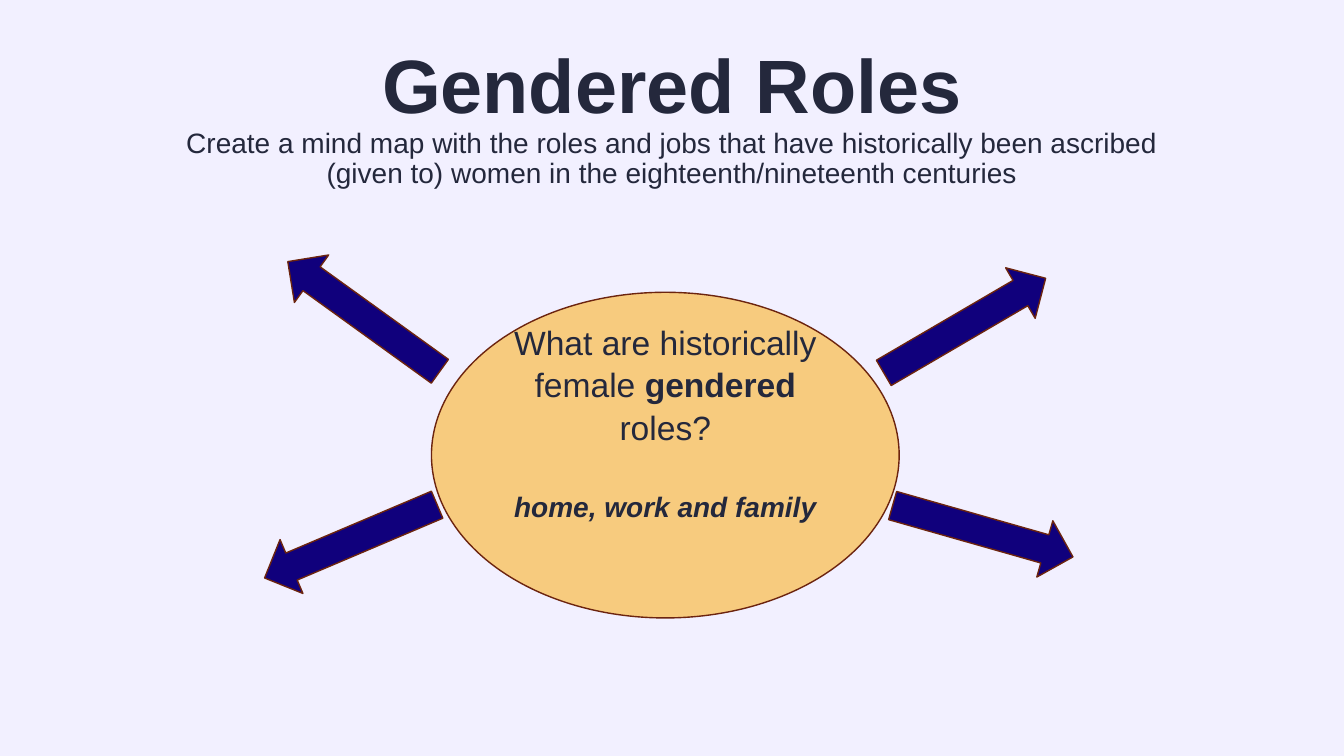
from pptx import Presentation
from pptx.dml.color import RGBColor
from pptx.enum.shapes import MSO_SHAPE
from pptx.enum.text import MSO_ANCHOR, MSO_AUTO_SIZE, PP_ALIGN
from pptx.util import Pt

ELLIPSE, UP_ARROW = MSO_SHAPE.OVAL, MSO_SHAPE.UP_ARROW
MIDDLE, CENTER, NO_FIT = MSO_ANCHOR.MIDDLE, PP_ALIGN.CENTER, MSO_AUTO_SIZE.NONE

LAVENDER = RGBColor(0xF2, 0xF0, 0xFF)
INK = RGBColor(0x24, 0x28, 0x3C)
AMBER = RGBColor(0xF7, 0xCB, 0x7E)
NAVY = RGBColor(0x10, 0x00, 0x7C)
BROWN = RGBColor(0x6C, 0x24, 0x0F)


def add_text(paragraph, text, size, bold=False, italic=False):
    run = paragraph.add_run()
    run.text = text
    run.font.name = "Arial"
    run.font.size = Pt(size)
    run.font.bold = bold
    run.font.italic = italic
    run.font.color.rgb = INK


def add_outlined(kind, left, top, width, height, fill):
    shape = slide.shapes.add_shape(kind, Pt(left), Pt(top), Pt(width), Pt(height))
    shape.shadow.inherit = False
    shape.fill.solid()
    shape.fill.fore_color.rgb = fill
    shape.line.color.rgb = BROWN
    shape.line.width = Pt(1)
    return shape


prs = Presentation()
prs.slide_width, prs.slide_height = Pt(960), Pt(540)
slide = prs.slides.add_slide(prs.slide_layouts[5])
slide.background.fill.solid()
slide.background.fill.fore_color.rgb = LAVENDER

# Heading and task
heading = slide.shapes.title
heading.left, heading.top, heading.width, heading.height = Pt(66), Pt(28.8), Pt(828), Pt(112.3)
heading.text_frame.auto_size = NO_FIT
heading.text_frame.word_wrap = True
heading.text_frame.vertical_anchor = MIDDLE
heading_line = heading.text_frame.paragraphs[0]
heading_line.alignment = CENTER
heading_line.line_spacing = 0.9
add_text(heading_line, "Gendered Roles", 54, bold=True)
for task_line in (
    "Create a mind map with the roles and jobs that have historically been ascribed",
    "(given to) women in the eighteenth/nineteenth centuries",
):
    heading_line.add_line_break()
    add_text(heading_line, task_line, 20)

# Central question
hub = add_outlined(ELLIPSE, 308.2, 208.8, 334.1, 232.6, AMBER)
hub_frame = hub.text_frame
hub_frame.word_wrap = True
hub_frame.vertical_anchor = MIDDLE
hub_frame.margin_top, hub_frame.margin_bottom = 0, Pt(48.3)
question = hub_frame.paragraphs[0]
add_text(question, "What are historically female ", 24)
add_text(question, "gendered", 24, bold=True)
add_text(question, " roles?", 24)
examples = hub_frame.add_paragraph()
examples.space_before = Pt(29)
add_text(examples, "home, work and family", 20, bold=True, italic=True)
for paragraph in hub_frame.paragraphs:
    paragraph.alignment = CENTER
    paragraph.line_spacing = 1.05

# Branches: left, top, rotation
for left, top, rotation in (
    (668.2, 165.6, 59.7),
    (681.1, 312.5, 105.9),
    (239, 159.1, 305.8),
    (229.7, 319.7, 247),
):
    branch = add_outlined(UP_ARROW, left, top, 41.8, 133.9, NAVY)
    branch.rotation = rotation

prs.save("out.pptx")
